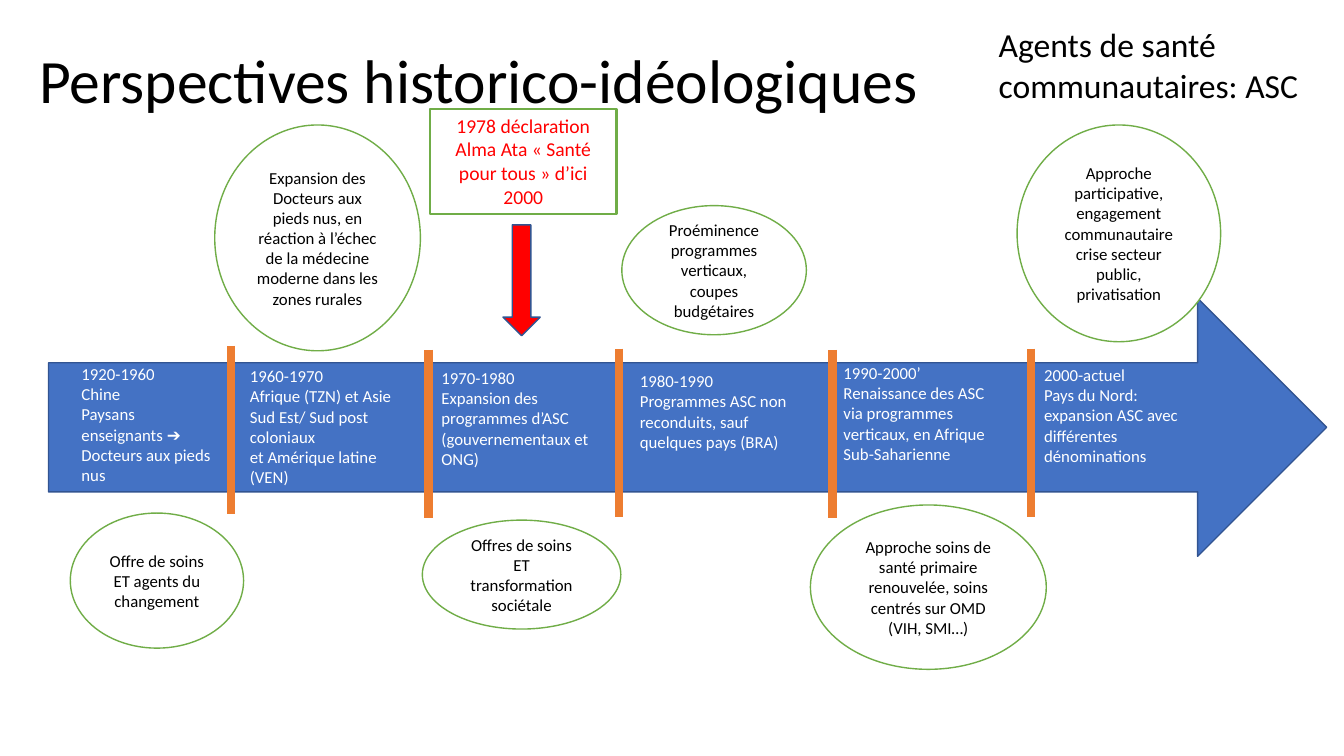
from lxml import etree
from pptx import Presentation
from pptx.dml.color import RGBColor
from pptx.enum.shapes import MSO_CONNECTOR, MSO_SHAPE
from pptx.enum.text import MSO_ANCHOR, PP_ALIGN
from pptx.oxml.ns import qn
from pptx.util import Pt

LINE = MSO_CONNECTOR.STRAIGHT
OVAL, RECT = MSO_SHAPE.OVAL, MSO_SHAPE.RECTANGLE
RIGHT, DOWN = MSO_SHAPE.RIGHT_ARROW, MSO_SHAPE.DOWN_ARROW
TOP, MIDDLE = MSO_ANCHOR.TOP, MSO_ANCHOR.MIDDLE
LEFT, CENTER = PP_ALIGN.LEFT, PP_ALIGN.CENTER

FONT = "Calibri"
COLORS = {
    "blue": "4472C4", "navy": "325491", "orange": "ED7D31",
    "green": "70AD47", "red": "FF0000", "white": "FFFFFF", "black": "000000",
}

# Periods on the arrow: left, top, width, height, paragraphs
ERAS = [
    (51.1, 256.3, 113, 108.7,
     ["1920-1960", "Chine", "Paysans enseignants ➔ Docteurs aux pieds nus"]),
    (171.4, 257.8, 121, 94.3,
     ["1960-1970", "Afrique (TZN) et Asie Sud Est/ Sud post coloniaux",
      "et Amérique latine (VEN)"]),
    (308.2, 259.2, 124.6, 79.9,
     ["1970-1980", "Expansion des programmes d’ASC (gouvernementaux et ONG)"]),
    (450, 261.4, 133.9, 65.5,
     ["1980-1990", "Programmes ASC non reconduits, sauf quelques pays (BRA)"]),
    (595.4, 255.6, 131, 79.9,
     ["1990-2000’",
      "Renaissance des ASC via programmes verticaux, en Afrique Sub-Saharienne"]),
    (738.7, 257, 121.7, 79.9,
     ["2000-actuel",
      "Pays du Nord: expansion ASC avec différentes dénominations"]),
]

# Comments around the arrow: left, top, width, height, paragraphs
NOTES = [
    (50.2, 366.5, 123.8, 96.5, ["Offre de soins ET agents du changement"]),
    (153.4, 89.3, 146.9, 161.3,
     ["Expansion des Docteurs aux pieds nus, en réaction à l’échec de la "
      "médecine moderne dans les zones rurales"]),
    (301.7, 371.5, 141.8, 77.8,
     ["Offres de soins ET transformation sociétale"]),
    (444.2, 146.9, 131.8, 92.2,
     ["Proéminence programmes verticaux, coupes budgétaires"]),
    (726.5, 89.3, 145.4, 154.8,
     ["Approche participative, engagement communautaire crise secteur public, "
      "privatisation"]),
    (578.9, 360.7, 168.5, 117.4,
     ["Approche soins de santé primaire renouvelée, soins centrés sur OMD",
      "(VIH, SMI…)"]),
]

# Dividers between periods: x, top
MARKS = [(164.9, 247), (306, 250), (442.1, 249), (594.7, 250), (736.6, 249)]
MARK_LEN = 120


def rgb(name):
    return RGBColor.from_string(COLORS[name])


def write(shape, paras, size, color, align=LEFT, anchor=TOP, space=None):
    frame = shape.text_frame
    frame.word_wrap = True
    frame.vertical_anchor = anchor
    for i, text in enumerate(paras):
        para = frame.add_paragraph() if i else frame.paragraphs[0]
        para.alignment = align
        if space:
            para.line_spacing = space
        run = para.add_run()
        run.text = text
        run.font.name = FONT
        run.font.size = Pt(size)
        run.font.color.rgb = rgb(color)


def add_text(slide, box, paras, size, color, **opts):
    shape = slide.shapes.add_textbox(*map(Pt, box))
    write(shape, paras, size, color, **opts)


def add_form(slide, kind, box, fill, line, width=1):
    shape = slide.shapes.add_shape(kind, *map(Pt, box))
    shape.shadow.inherit = False
    if fill:
        shape.fill.solid()
        shape.fill.fore_color.rgb = rgb(fill)
    else:
        shape.fill.background()
    shape.line.color.rgb = rgb(line)
    shape.line.width = Pt(width)
    return shape


def add_mark(slide, x, top):
    mark = slide.shapes.add_connector(
        LINE, Pt(x), Pt(top), Pt(x), Pt(top + MARK_LEN))
    mark.line.color.rgb = rgb("orange")
    mark.line.width = Pt(6)
    etree.SubElement(mark.element.spPr, qn("a:effectLst"))


def main():
    prs = Presentation()
    prs.slide_width, prs.slide_height = Pt(960), Pt(540)
    slide = prs.slides.add_slide(prs.slide_layouts[6])

    # Title
    add_text(slide, (20.9, 7.2, 828, 104.4),
             ["Perspectives historico-idéologiques"], 44, "black",
             anchor=MIDDLE, space=0.9)

    # Timeline
    add_form(slide, RIGHT, (34.6, 213.1, 913, 184.3), "blue", "navy")
    for x, top in MARKS:
        add_mark(slide, x, top)
    for *box, paras in ERAS:
        add_text(slide, box, paras, 12, "white")

    # Comments
    for *box, paras in NOTES:
        oval = add_form(slide, OVAL, box, "white", "green")
        write(oval, paras, 12, "black", align=CENTER, anchor=MIDDLE)

    # Declaration of 1978
    event = add_form(slide, RECT, (307.2, 77.8, 133.2, 74.9), None, "green", 1.5)
    write(event, ["1978 déclaration", "Alma Ata « Santé pour tous » d’ici 2000"],
          14, "red", align=CENTER)
    add_form(slide, DOWN, (359.3, 160.6, 26.6, 79.2), "red", "navy")

    # Topic
    add_text(slide, (706.3, 13.7, 254.2, 65.5),
             ["Agents de santé communautaires: ASC"], 24, "black")

    prs.save("out.pptx")


if __name__ == "__main__":
    main()
